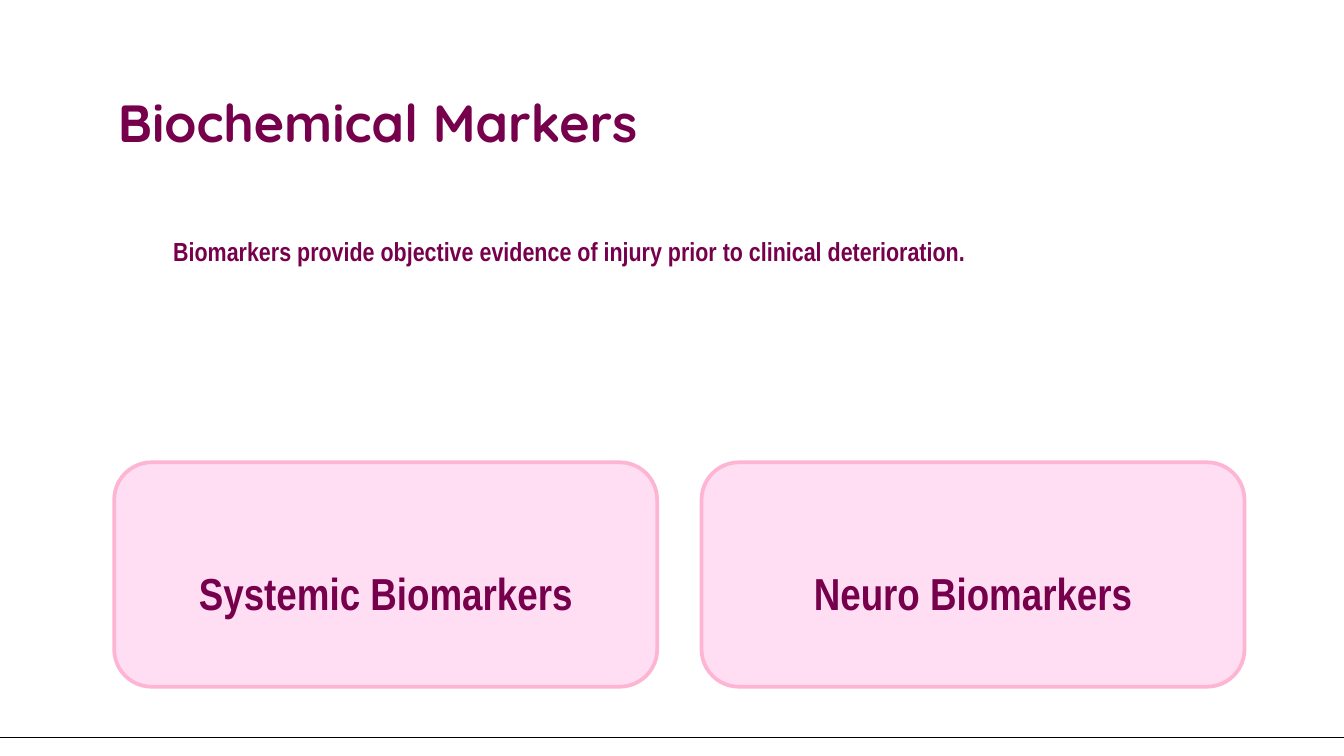
from lxml.etree import SubElement
from pptx import Presentation
from pptx.dml.color import RGBColor
from pptx.enum.shapes import MSO_CONNECTOR, MSO_SHAPE
from pptx.enum.text import MSO_ANCHOR, MSO_AUTO_SIZE, PP_ALIGN
from pptx.oxml.ns import qn
from pptx.util import Inches, Pt

PLUM = RGBColor(0x77, 0x00, 0x4C)
BLUSH = RGBColor(0xFF, 0xDE, 0xF3)
PINK = RGBColor(0xFD, 0xB5, 0xD3)
BLACK = RGBColor(0x00, 0x00, 0x00)

CARD_LEFT, CARD_TOP = 0.85, 3.44
CARD_WIDTH, CARD_HEIGHT = 4.04, 1.67
CARD_STEP = 4.37
LABELS = [("Systemic Biomarkers", 3.02), ("Neuro Biomarkers", 2.89)]


def add_text(page, text, left, top, width, height, size, font="Arial Narrow"):
    box = page.shapes.add_textbox(
        Inches(left), Inches(top), Inches(width), Inches(height)
    )
    frame = box.text_frame
    frame.word_wrap = True
    frame.margin_top = frame.margin_bottom = Inches(0.1)
    span = frame.paragraphs[0].add_run()
    span.text = text
    span.font.size = Pt(size)
    span.font.name = font
    span.font.bold = True
    span.font.color.rgb = PLUM
    return frame


def add_card(page, left):
    card = page.shapes.add_shape(
        MSO_SHAPE.ROUNDED_RECTANGLE,
        Inches(left), Inches(CARD_TOP), Inches(CARD_WIDTH), Inches(CARD_HEIGHT),
    )
    card.shadow.inherit = False
    card.fill.solid()
    card.fill.fore_color.rgb = BLUSH
    card.line.color.rgb = PINK
    card.line.width = Pt(2)


def add_label(page, text, center, width):
    frame = add_text(page, text, center - width / 2, 3.81, width, 0.74, 24)
    frame.margin_top = frame.margin_bottom = Inches(0.05)
    frame.word_wrap = False
    frame.auto_size = MSO_AUTO_SIZE.SHAPE_TO_FIT_TEXT
    para = frame.paragraphs[0]
    para.alignment = PP_ALIGN.CENTER
    para.line_spacing = Pt(54)


def add_footer_line(page):
    line = page.shapes.add_connector(
        MSO_CONNECTOR.STRAIGHT, Inches(0), Inches(5.49), Inches(10), Inches(5.49)
    )
    line.line.color.rgb = BLACK
    line.line.width = Pt(0.75)
    SubElement(line._element.spPr, qn("a:effectLst"))


def main():
    deck = Presentation()
    deck.slide_width = Inches(10)
    deck.slide_height = deck.slide_width * 9 // 16
    page = deck.slides.add_slide(deck.slide_layouts[6])

    add_footer_line(page)
    title = add_text(
        page, "Biochemical Markers", 0.78, 0.49, 5.64, 0.75, 28, "Quicksand"
    )
    title.vertical_anchor = MSO_ANCHOR.BOTTOM
    subtitle = add_text(
        page,
        "Biomarkers provide objective evidence of injury prior to clinical deterioration.",
        1.19, 1.42, 6.39, 0.75, 14,
    )
    subtitle.paragraphs[0].line_spacing = 2.0

    for index, (text, width) in enumerate(LABELS):
        left = CARD_LEFT + index * CARD_STEP
        add_card(page, left)
        add_label(page, text, left + CARD_WIDTH / 2, width)

    deck.save("out.pptx")


if __name__ == "__main__":
    main()
